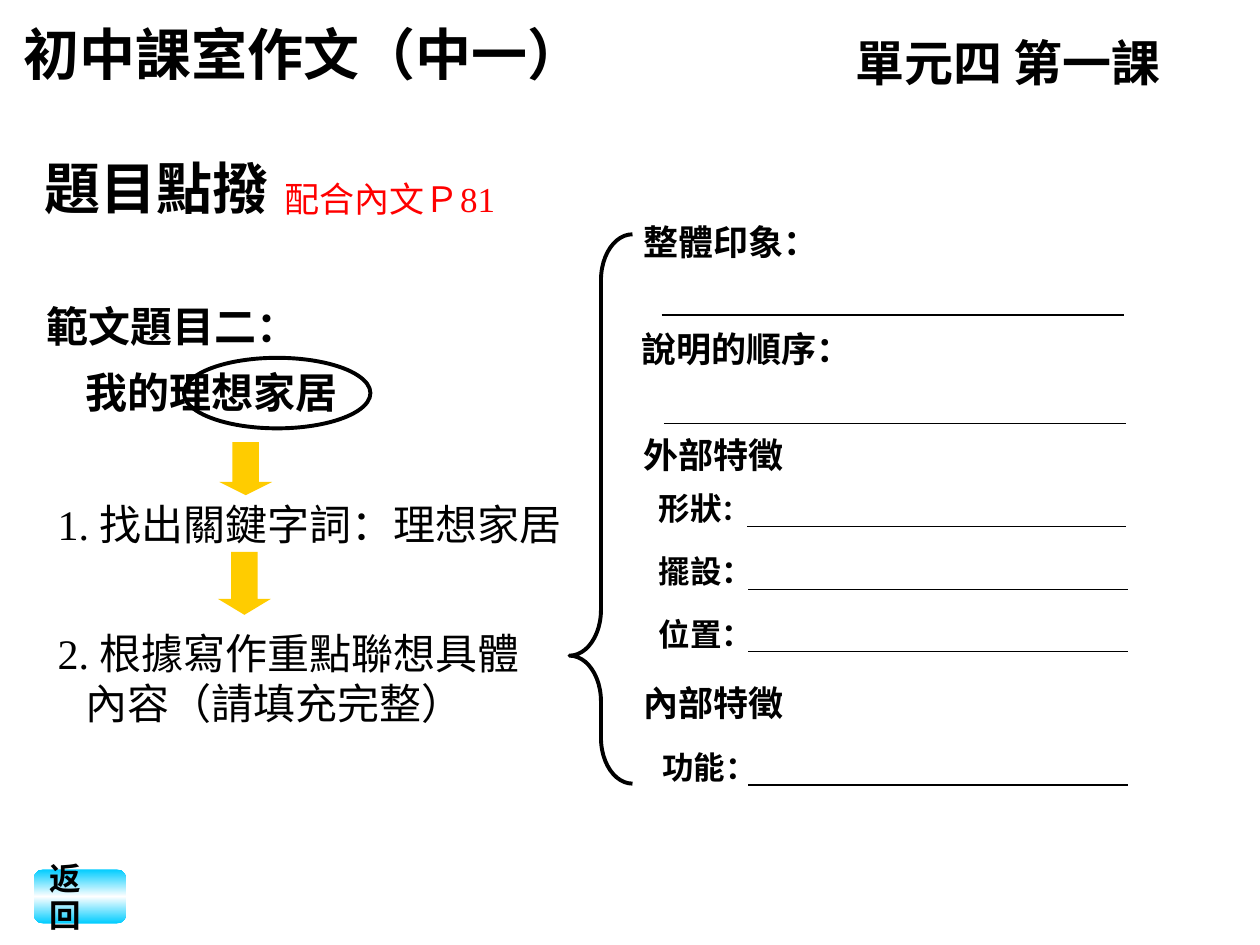
import copy
from dataclasses import dataclass

import pptx
from lxml import etree
from pptx.dml.color import RGBColor
from pptx.enum.shapes import MSO_CONNECTOR, MSO_SHAPE
from pptx.enum.text import MSO_ANCHOR, MSO_AUTO_SIZE, PP_ALIGN
from pptx.oxml.ns import qn
from pptx.util import Inches, Pt


@dataclass(frozen=True)
class Theme:
    ink: str = "000000"
    note: str = "FF0000"
    arrow: str = "FFCC00"
    button: tuple = ("00CCFF", "FFFFFF", "00CCFF")
    sans: str = "DejaVu Sans"
    serif: str = "Times New Roman"
    head: str = "Lato"
    plain: str = "Arial"
    title: int = 32
    lesson: int = 28
    body: int = 24
    label: int = 20
    field: int = 18
    colon: int = 16
    outline: float = 2.25
    rule: float = 0.75


THEME = Theme()
SLIDE = (10, 7.5)

TITLE = ("題目點撥", (0.25, 1.17, 3.08, 0.63))
COURSE = ("初中課室作文（中一）", (0.09, 0.11, 5.22, 0.63))
LESSON = ("單元四 第一課", (6.69, 0.21, 3.35, 0.57))
PAGE_NOTE = ("配合內文Ｐ81", (1.86, 1.36, 2.47, 0.43))
TOPIC = (("範文題目二：", "我的理想家居"), (0.27, 2.22, 5, 1.14))
TOPIC_INDENT = 0.31
KEYWORD_RING = (1.46, 2.84, 1.48, 0.56)

STEPS = [
    ("1. ", ["找出關鍵字詞：理想家居"], (0.36, 3.91, 4.33, 0.5)),
    ("2. ", ["根據寫作重點聯想具體", "內容（請填充完整）"], (0.36, 4.93, 4.17, 0.9)),
]
STEP_INDENT = 0.22
# box, then the share of the width taken by the head
ARROWS = [((1.74, 3.51, 0.42, 0.42), 0.25), ((1.73, 4.38, 0.42, 0.5), 0.3)]

BRACE = (4.52, 1.86, 0.5, 4.36)
BRACE_SHAPE = (0.727, 0.767)
# (text, size) runs, left, top of the label
LABELS = [
    ([("整體印象：", THEME.label)], 5.01, 1.70),
    ([("說明的順序：", THEME.label)], 4.99, 2.55),
    ([("外部特徵", THEME.label)], 5.01, 3.39),
    ([("形狀", THEME.field), ("：", THEME.colon)], 5.13, 3.83),
    ([("擺設：", THEME.field)], 5.13, 4.33),
    ([("位置：", THEME.field)], 5.13, 4.83),
    ([("內部特徵", THEME.label)], 5.01, 5.36),
    ([("功能：", THEME.field)], 5.16, 5.89),
]
LABEL_SIZE = (3.83, 0.43)
# left, right, height on the slide of each blank to fill in
BLANKS = [
    (5.25, 8.92, 2.50), (5.27, 8.94, 3.36), (5.93, 8.94, 4.18),
    (5.94, 8.95, 4.68), (5.94, 8.95, 5.17), (5.94, 8.95, 6.23),
]
BUTTON = ("返回", (0.27, 6.9, 0.73, 0.43))


def rgb(code):
    return RGBColor.from_string(code)


def inches(lengths):
    return [Inches(length) for length in lengths]


def style(span, size, font, bold=False, color=THEME.ink):
    span.font.size = Pt(size)
    span.font.name = font
    span.font.bold = bold
    span.font.color.rgb = rgb(color)


def add_text(page, place, lines, indents=None, align=PP_ALIGN.LEFT, spacing=1.0):
    """Add a box of lines, each a list of (text, size, font, bold, color) runs."""
    frame = page.shapes.add_textbox(*inches(place)).text_frame
    frame.word_wrap = True
    for index, line in enumerate(lines):
        para = frame.add_paragraph() if index else frame.paragraphs[0]
        para.alignment = align
        para.line_spacing = spacing
        if indents and indents[index]:
            para._p.get_or_add_pPr().set("marL", str(Inches(indents[index])))
        for text, *look in line:
            span = para.add_run()
            span.text = text
            style(span, *look)


def add_shape(page, kind, place, adjustments=(), fill=None, outline=None):
    shape = page.shapes.add_shape(kind, *inches(place))
    shape.shadow.inherit = False
    for index, value in enumerate(adjustments):
        shape.adjustments[index] = value
    if fill:
        shape.fill.solid()
        shape.fill.fore_color.rgb = rgb(fill)
    else:
        shape.fill.background()
    if outline:
        shape.line.color.rgb = rgb(outline)
        shape.line.width = Pt(THEME.outline)
    else:
        shape.line.fill.background()
    return shape


def add_blank(page, left, right, height):
    line = page.shapes.add_connector(
        MSO_CONNECTOR.STRAIGHT, *inches((left, height, right, height)))
    line.line.color.rgb = rgb(THEME.ink)
    line.line.width = Pt(THEME.rule)
    etree.SubElement(line._element.spPr, qn("a:effectLst"))


def add_title(page):
    text, place = TITLE
    title = page.shapes.title
    title.left, title.top, title.width, title.height = inches(place)
    frame = title.text_frame
    frame.text = text
    frame.auto_size = MSO_AUTO_SIZE.NONE
    frame.vertical_anchor = MSO_ANCHOR.TOP
    frame.paragraphs[0].alignment = PP_ALIGN.LEFT
    style(frame.paragraphs[0].runs[0], THEME.title, THEME.plain, True)


def add_button(page):
    text, place = BUTTON
    button = add_shape(page, MSO_SHAPE.FLOWCHART_ALTERNATE_PROCESS, place)
    button.fill.gradient()
    button.fill.gradient_angle = 90
    stop_list = button._element.spPr.find(".//" + qn("a:gsLst"))
    stop_list.insert(1, copy.deepcopy(stop_list[0]))
    for index, (stop, color) in enumerate(zip(button.fill.gradient_stops, THEME.button)):
        stop.position = index / 2
        stop.color.rgb = rgb(color)
    frame = button.text_frame
    frame.text = text
    frame.word_wrap = True
    frame.vertical_anchor = MSO_ANCHOR.MIDDLE
    frame.paragraphs[0].alignment = PP_ALIGN.LEFT
    style(frame.paragraphs[0].runs[0], THEME.field, THEME.plain, True)


def main():
    deck = pptx.Presentation()
    deck.slide_width, deck.slide_height = inches(SLIDE)
    page = deck.slides.add_slide(deck.slide_layouts[5])
    add_title(page)

    for (text, place), size in ((COURSE, THEME.title), (LESSON, THEME.lesson)):
        add_text(page, place, [[(text, size, THEME.head, True)]])
    text, place = PAGE_NOTE
    add_text(page, place, [[(text, THEME.label, THEME.serif, False, THEME.note)]],
             align=PP_ALIGN.CENTER)

    texts, place = TOPIC
    add_text(page, place, [[(text, THEME.body, THEME.sans, True)] for text in texts],
             indents=(0, TOPIC_INDENT), spacing=1.3)
    add_shape(page, MSO_SHAPE.OVAL, KEYWORD_RING, outline=THEME.ink)

    for number, texts, place in STEPS:
        lines = [[(text, THEME.body, THEME.sans)] for text in texts]
        lines[0].insert(0, (number, THEME.body, THEME.serif))
        add_text(page, place, lines, indents=(0, STEP_INDENT))
    for place, head in ARROWS:
        # the head's length is stored first for block arrows' second handle
        add_shape(page, MSO_SHAPE.DOWN_ARROW, place, (0.5, head), fill=THEME.arrow)

    add_shape(page, MSO_SHAPE.LEFT_BRACE, BRACE, BRACE_SHAPE, outline=THEME.ink)
    for runs, left, top in LABELS:
        add_text(page, (left, top, *LABEL_SIZE),
                 [[(text, size, THEME.sans, True) for text, size in runs]])
    for blank in BLANKS:
        add_blank(page, *blank)
    add_button(page)
    deck.save("out.pptx")


if __name__ == "__main__":
    main()
